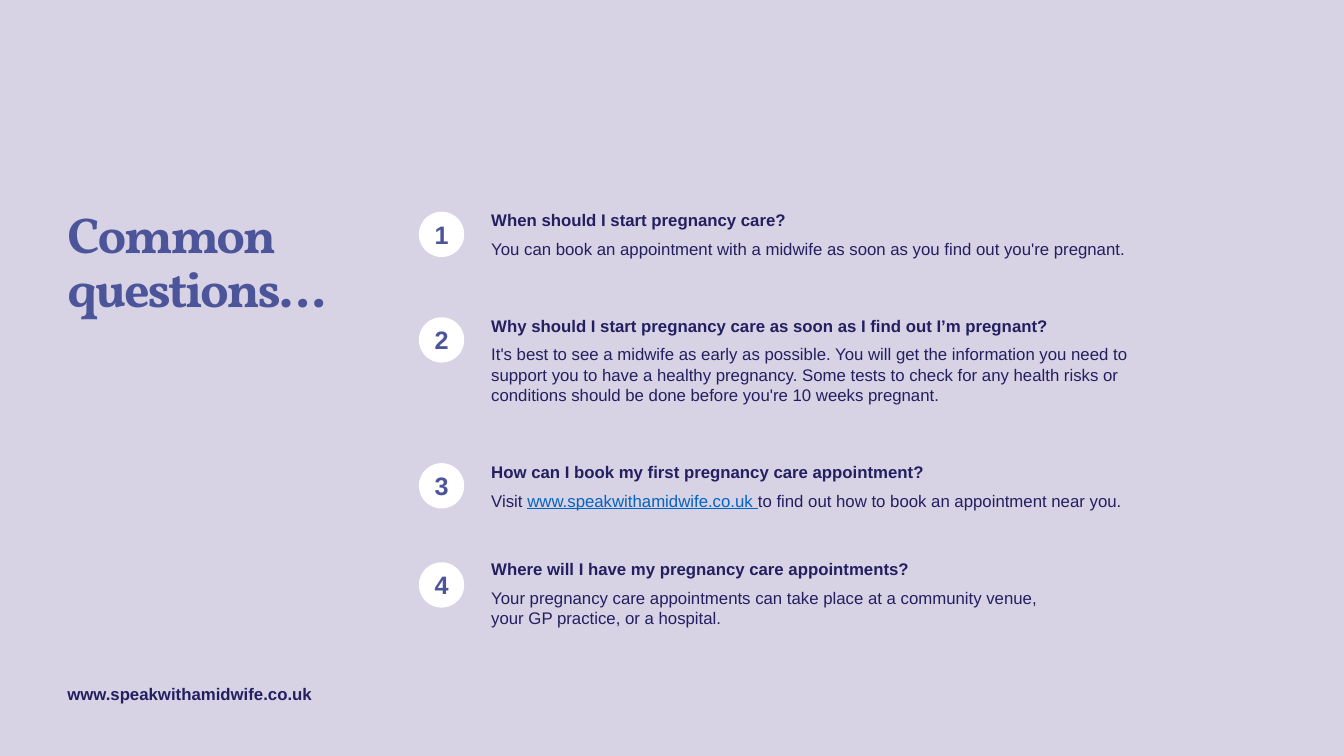
from pptx import Presentation
from pptx.dml.color import RGBColor
from pptx.enum.shapes import MSO_SHAPE
from pptx.enum.text import MSO_ANCHOR, PP_ALIGN
from pptx.util import Pt

OVAL = MSO_SHAPE.OVAL
MIDDLE = MSO_ANCHOR.MIDDLE
CENTER = PP_ALIGN.CENTER

COLORS = {
    "background": "D7D2E4",
    "accent": "4D559A",
    "body": "231F60",
    "link": "0563C1",
    "badge": "FFFFFF",
}
SITE = "www.speakwithamidwife.co.uk"
LINK = SITE + " "
BADGE_SIZE = 32.4

# Space before the question, top of its badge, question, answer
QUESTIONS = [
    (0, 151.2, "When should I start pregnancy care?",
     "You can book an appointment with a midwife as soon as you find out "
     "you're pregnant."),
    (40.8, 226.6, "Why should I start pregnancy care as soon as I find out I’m pregnant?",
     "It's best to see a midwife as early as possible. You will get the "
     "information you need to support you to have a healthy pregnancy. Some "
     "tests to check for any health risks or conditions should be done before "
     "you're 10 weeks pregnant."),
    (40.8, 330.8, "How can I book my first pregnancy care appointment?",
     f"Visit {LINK}to find out how to book an appointment near you."),
    (34.8, 401.6, "Where will I have my pregnancy care appointments?",
     "Your pregnancy care appointments can take place at a community venue, \v"
     "your GP practice, or a hospital."),
]


def rgb(name):
    return RGBColor.from_string(COLORS[name])


def style(paragraph, size, color, bold=True, font="Arial"):
    paragraph.font.name = font
    paragraph.font.size = Pt(size)
    paragraph.font.bold = bold
    paragraph.font.color.rgb = rgb(color)


def add_text_frame(slide, left, top, width, height, wrap=True):
    frame = slide.shapes.add_textbox(Pt(left), Pt(top), Pt(width), Pt(height)).text_frame
    frame.word_wrap = wrap
    return frame


def add_title(slide, left, top, width, height):
    title = add_text_frame(slide, left, top, width, height).paragraphs[0]
    title.text = "Common\vquestions…"
    title.line_spacing = 0.9
    style(title, 36, "accent", font="Vollkorn")
    for run in title.runs:
        run.font._element.set("spc", "-150")


def add_answer(paragraph, answer):
    """Fill in an answer, underlining the site address where it occurs."""
    before, link, after = answer.partition(LINK)
    paragraph.text = before
    if link:
        address = paragraph.add_run()
        address.text = link
        address.font.underline = True
        address.font.color.rgb = rgb("link")
        paragraph.add_run().text = after
    paragraph.space_before = Pt(6)
    style(paragraph, 12, "body", bold=False)


def add_questions(slide, left, top, width, height):
    frame = add_text_frame(slide, left, top, width, height)
    for number, (gap, _, question, answer) in enumerate(QUESTIONS):
        heading = frame.add_paragraph() if number else frame.paragraphs[0]
        heading.text = question
        if gap:
            heading.space_before = Pt(gap)
        style(heading, 12, "body")
        add_answer(frame.add_paragraph(), answer)


def add_badge(slide, number, left, top, size):
    badge = slide.shapes.add_shape(OVAL, Pt(left), Pt(top), Pt(size), Pt(size))
    badge.shadow.inherit = False
    badge.fill.solid()
    badge.fill.fore_color.rgb = rgb("badge")
    badge.line.fill.background()
    frame = badge.text_frame
    frame.margin_left = frame.margin_right = frame.margin_top = frame.margin_bottom = 0
    frame.vertical_anchor = MIDDLE
    label = frame.paragraphs[0]
    label.text = str(number)
    label.alignment = CENTER
    style(label, 18, "accent")


def add_footer(slide, left, top, width, height):
    footer = add_text_frame(slide, left, top, width, height, wrap=False).paragraphs[0]
    footer.text = SITE
    style(footer, 12, "body")


def main():
    prs = Presentation()
    prs.slide_width, prs.slide_height = Pt(960), Pt(540)
    slide = prs.slides.add_slide(prs.slide_layouts[6])
    slide.background.fill.solid()
    slide.background.fill.fore_color.rgb = rgb("background")

    add_title(slide, 41, 146.2, 270, 85.7)
    add_questions(slide, 343.8, 146.2, 512, 308.9)
    add_footer(slide, 41, 484.6, 191.5, 21.6)
    for number, (_, badge_top, _, _) in enumerate(QUESTIONS, 1):
        add_badge(slide, number, 299.2, badge_top, BADGE_SIZE)
    prs.save("out.pptx")


if __name__ == "__main__":
    main()
